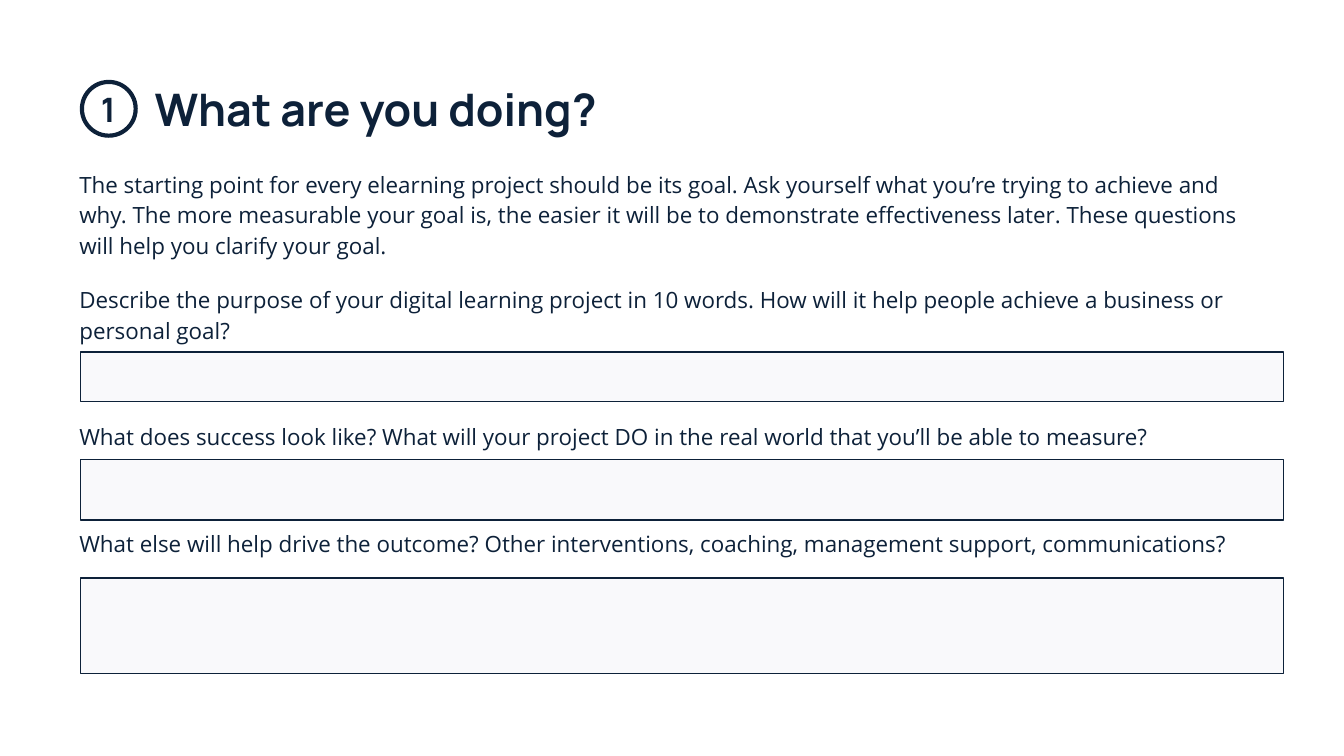
"""Build the goal worksheet slide."""
from lxml.etree import SubElement
from pptx import Presentation
from pptx.dml.color import RGBColor
from pptx.enum.shapes import MSO_SHAPE as Kind
from pptx.enum.text import MSO_ANCHOR as Anchor, MSO_AUTO_SIZE as Fit, PP_ALIGN as Align
from pptx.oxml.ns import qn
from pptx.util import Inches, Pt

NAVY = RGBColor(0x0D, 0x21, 0x39)
PALE = RGBColor(0xF9, 0xF9, 0xFB)
HEAD = "Manrope"
BODY = "Open Sans"

INTRO = (
    "The starting point for every elearning project should be its goal. "
    "Ask yourself what you’re trying to achieve and why. The more measurable "
    "your goal is, the easier it will be to demonstrate effectiveness later. "
    "These questions will help you clarify your goal."
)
ASKS = [
    ("Describe the purpose of your digital learning project in 10 words. "
     "How will it help people achieve a business or personal goal?", 12),
    ("What does success look like? What will your project DO in the real world "
     "that you’ll be able to measure?", 40.5),
    ("What else will help drive the outcome? Other interventions, coaching, "
     "management support, communications?", 40.5),
]
FIELDS = [(2.62, 0.37), (3.42, 0.45), (4.3, 0.71)]


def write(para, text, font=BODY, size=12, bold=False, align=Align.LEFT, before=0, line=1.0):
    props = para._p.get_or_add_pPr()
    props.set("marL", "0")
    props.set("indent", "0")
    SubElement(props, qn("a:buNone"))
    para.alignment = align
    para.space_before = Pt(before)
    para.line_spacing = line
    run = para.add_run()
    run.text = text
    run.font.name = font
    run.font.size = Pt(size)
    run.font.bold = bold
    run.font.color.rgb = NAVY


class Sheet:
    def __init__(self, slide):
        self.slide = slide

    def place(self, shape, box):
        shape.left, shape.top, shape.width, shape.height = map(Inches, box)
        frame = shape.text_frame
        frame.word_wrap = True
        frame.auto_size = Fit.NONE
        frame.vertical_anchor = Anchor.TOP
        frame.margin_left = frame.margin_right = Inches(0.1)
        frame.margin_top = frame.margin_bottom = Inches(0.1)
        return frame

    def title(self, text, box):
        frame = self.place(self.slide.shapes.title, box)
        write(frame.paragraphs[0], text, font=HEAD, size=24, bold=True)

    def body(self, items, box):
        frame = self.place(self.slide.placeholders[1], box)
        for i, (text, gap) in enumerate(items):
            para = frame.add_paragraph() if i else frame.paragraphs[0]
            write(para, text, before=gap, line=1.15)

    def label(self, text, box):
        frame = self.place(self.slide.shapes.add_textbox(0, 0, 0, 0), box)
        write(frame.paragraphs[0], text, font=HEAD, size=18, bold=True, align=Align.CENTER)

    def shape(self, kind, box, width, fill=None):
        shape = self.slide.shapes.add_shape(kind, *map(Inches, box))
        shape.shadow.inherit = False
        if fill is None:
            shape.fill.background()
        else:
            shape.fill.solid()
            shape.fill.fore_color.rgb = fill
        shape.line.color.rgb = NAVY
        shape.line.width = Pt(width)


def main():
    deck = Presentation()
    deck.slide_width, deck.slide_height = Inches(10), Inches(10 * 9 / 16)
    sheet = Sheet(deck.slides.add_slide(deck.slide_layouts[1]))
    sheet.title("What are you doing?", (1.05, 0.51, 6.11, 0.61))
    sheet.body([(INTRO, 0), *ASKS], (0.49, 1.14, 9.07, 3.5))
    sheet.shape(Kind.OVAL, (0.61, 0.61, 0.4, 0.4), 2.25)
    sheet.label("1", (0.65, 0.56, 0.31, 0.4))
    for top, high in FIELDS:
        sheet.shape(Kind.RECTANGLE, (0.6, top, 8.95, high), 0.75, PALE)
    deck.save("out.pptx")


if __name__ == "__main__":
    main()
